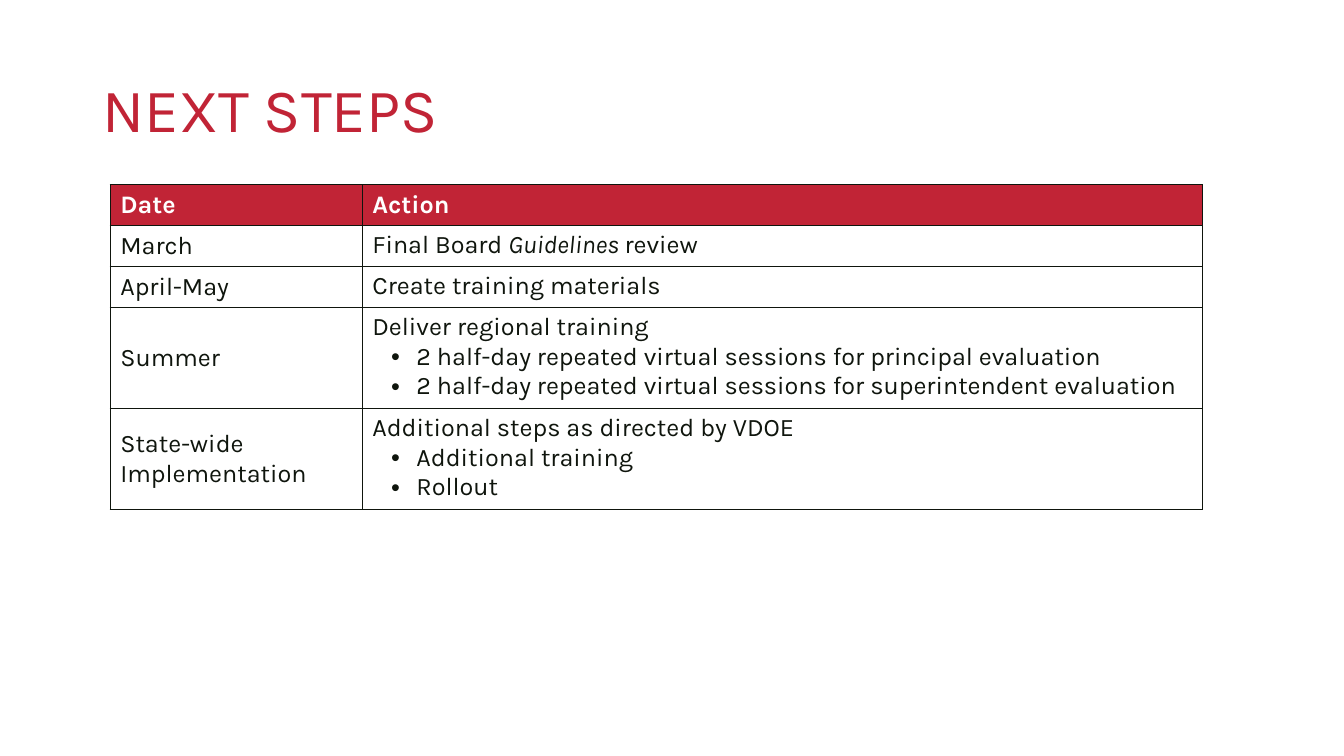
from dataclasses import dataclass

from lxml import etree
from pptx import Presentation
from pptx import util as u
from pptx.dml.color import RGBColor
from pptx.enum import text
from pptx.oxml.ns import qn


@dataclass(frozen=True)
class Theme:
    font: str = "Karla"
    red: str = "C12436"
    ink: str = "0F150D"
    white: str = "FFFFFF"
    title: int = 44
    body: int = 18
    outer: float = 1
    inner: float = 0.5


T = Theme()

# Each cell is a list of paragraphs; each paragraph is a list of runs.
# Every paragraph after the first in a cell is a bullet.
HEADER = ("Date", "Action")
STEPS = [
    ("March", [["Final Board ", "Guidelines ", "review"]]),
    ("April-May", [["Create training materials"]]),
    ("Summer", [["Deliver regional training"],
                ["2 half-day repeated virtual sessions for principal evaluation"],
                ["2 half-day repeated virtual sessions for superintendent evaluation"]]),
    ("State-wide Implementation", [["Additional steps as directed by VDOE"],
                                   ["Additional training"],
                                   ["Rollout"]]),
]
ITALIC = {"Guidelines "}


def px(n):
    return u.Emu(n * 9525)


def style(font, size, color, bold=False, italic=False):
    font.name, font.size = T.font, u.Pt(size)
    font.bold, font.italic = bold, italic
    font.color.rgb = RGBColor.from_string(color)


def add_bullet(p):
    pPr = p._p.get_or_add_pPr()
    pPr.set("marL", str(px(42)))
    pPr.set("indent", str(px(-24)))
    etree.SubElement(pPr, qn("a:buFont"), typeface="Arial")
    etree.SubElement(pPr, qn("a:buChar"), char="•")


def add_borders(cell, widths):
    tcPr = cell._tc.get_or_add_tcPr()
    for side, width in zip("LRTB", widths):
        ln = etree.SubElement(tcPr, qn(f"a:ln{side}"), w=str(u.Pt(width)))
        fill = etree.SubElement(ln, qn("a:solidFill"))
        etree.SubElement(fill, qn("a:srgbClr"), val=T.ink)


def fill_cell(cell, paragraphs, header):
    tf = cell.text_frame
    for i, runs in enumerate(paragraphs):
        p = tf.paragraphs[0] if i == 0 else tf.add_paragraph()
        if i:
            add_bullet(p)
        for words in runs:
            r = p.add_run()
            r.text = words
            style(r.font, T.body, T.white if header else T.ink,
                  bold=header, italic=words in ITALIC)
    cell.fill.solid()
    cell.fill.fore_color.rgb = RGBColor.from_string(T.red if header else T.white)


def title(s, x, y, w, h):
    tf = s.shapes.add_textbox(px(x), px(y), px(w), px(h)).text_frame
    tf.word_wrap = True
    tf.vertical_anchor = text.MSO_ANCHOR.MIDDLE
    p = tf.paragraphs[0]
    p.text = "NEXT STEPS"
    p.line_spacing = 0.9
    style(p.runs[0].font, T.title, T.red)


def steps_table(s, x, y, w, row_h, line_h):
    rows = [(HEADER[0], [[HEADER[1]]])] + STEPS
    heights = [row_h + line_h * (len(action) - 1) for _, action in rows]
    tbl = s.shapes.add_table(len(rows), 2, px(x), px(y), px(w), px(sum(heights))).table
    tbl.horz_banding = False
    date_w = w * 3 // 13
    for col, width in zip(tbl.columns, (date_w, w - date_w)):
        col.width = px(width)

    last = len(rows) - 1
    for i, (date, action) in enumerate(rows):
        tbl.rows[i].height = px(heights[i])
        for j, paragraphs in enumerate(([[date]], action)):
            cell = tbl.cell(i, j)
            # Heavier rules round the outside and the header
            heavy = (j == 0 or i == 0, j == 1 or i == 0, i == 0, i == last)
            add_borders(cell, [T.outer if edge else T.inner for edge in heavy])
            fill_cell(cell, paragraphs, header=i == 0)
            if i and j == 0:
                cell.vertical_anchor = text.MSO_ANCHOR.MIDDLE


def main():
    prs = Presentation()
    prs.slide_width, prs.slide_height = px(1280), px(720)
    s = prs.slides.add_slide(prs.slide_layouts[6])
    title(s, 88, 38, 1104, 139)
    steps_table(s, 105, 176, 1040, row_h=39, line_h=28)
    prs.save("out.pptx")


if __name__ == "__main__":
    main()
